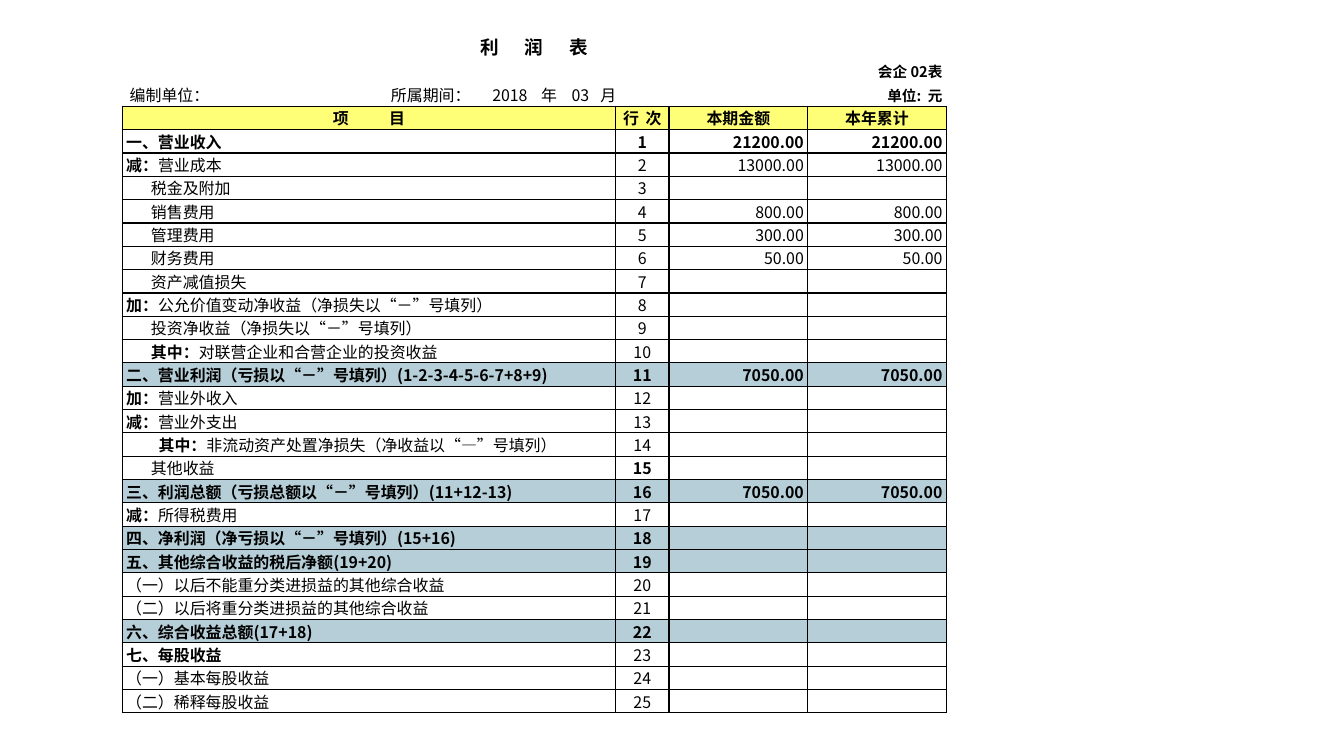
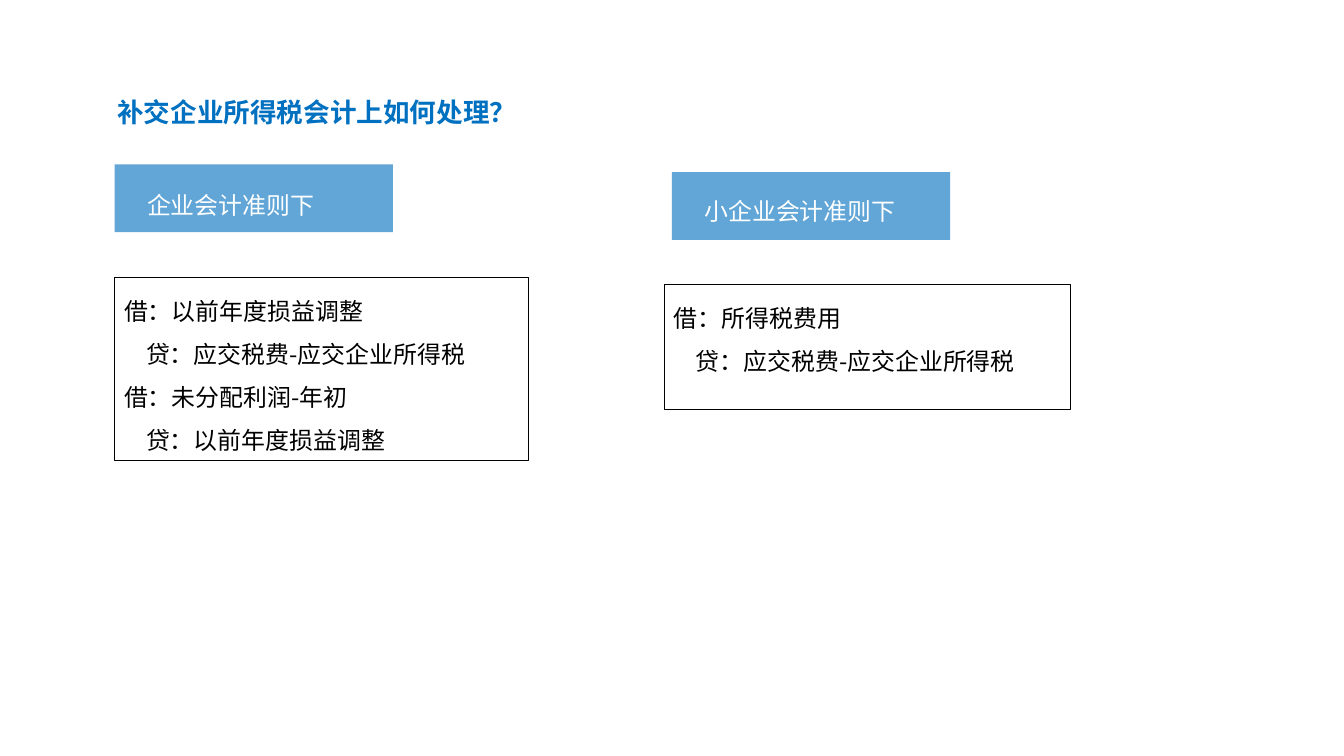
"""Build an income statement slide and a tax bookkeeping slide."""
from dataclasses import dataclass

from lxml import etree
from pptx import Presentation, util as u
from pptx.dml.color import RGBColor
from pptx.enum import shapes, text
from pptx.oxml import ns

PX = u.Inches(1) // 100
FONT = "Noto Sans CJK SC"
BLACK, WHITE, BLUE = "000000", "FFFFFF", "0070C0"
HEAD_FILL, TOTAL_FILL = "FFFF77", "B6CED7"
NO_GRID_STYLE = "{2D5ABB26-0587-4C30-8999-92F81FD0307C}"
LEFT, CENTER, RIGHT = text.PP_ALIGN.LEFT, text.PP_ALIGN.CENTER, text.PP_ALIGN.RIGHT
COLUMNS = (432, 84, 56, 145, 145)
TABLE_HEIGHT = 708
HEAD_ROWS = 4
PERIOD_TABS = (277, 383, 434, 466, 496)


@dataclass(frozen=True)
class Run:
    """A stretch of text with its own look."""
    text: str
    size: int = 12
    bold: bool = False
    color: str = BLACK
    spacing: int = 0


@dataclass(frozen=True)
class Item:
    """A numbered line of the income statement."""
    label: str
    lead: str = ""
    amount: str = ""
    indent: int = 0
    bold: bool = False
    number_bold: bool = False
    fill: str = ""


@dataclass(frozen=True)
class Entry:
    """A line of a journal entry."""
    text: str
    indent: int = 0


@dataclass(frozen=True)
class Standard:
    """A tag, its caption and its boxed journal entries."""
    tag: tuple[int, int]
    caption: tuple[int, int, int, int]
    name: str
    box: tuple[int, int, int, int]
    entries: tuple[Entry, ...]


def total(label: str, amount: str = "") -> Item:
    """Return a shaded bold line."""
    return Item(label, amount=amount, bold=True, number_bold=True, fill=TOTAL_FILL)


ITEMS = (
    Item("一、营业收入", amount="21200.00", bold=True, number_bold=True),
    Item("营业成本", "减：", "13000.00"),
    Item("税金及附加", indent=26),
    Item("销售费用", amount="800.00", indent=26),
    Item("管理费用", amount="300.00", indent=26),
    Item("财务费用", amount="50.00", indent=26),
    Item("资产减值损失", indent=26),
    Item("公允价值变动净收益（净损失以“－”号填列）", "加："),
    Item("投资净收益（净损失以“－”号填列）", indent=26),
    Item("对联营企业和合营企业的投资收益", "其中：", indent=26),
    total("二、营业利润（亏损以“－”号填列）(1-2-3-4-5-6-7+8+9)", "7050.00"),
    Item("营业外收入", "加："),
    Item("营业外支出", "减："),
    Item("非流动资产处置净损失（净收益以“—”号填列）", "其中：", indent=34),
    Item("其他收益", indent=26, number_bold=True),
    total("三、利润总额（亏损总额以“－”号填列）(11+12-13)", "7050.00"),
    Item("所得税费用", "减："),
    total("四、净利润（净亏损以“－”号填列）(15+16)"),
    total("五、其他综合收益的税后净额(19+20)"),
    Item("（一）以后不能重分类进损益的其他综合收益"),
    Item("（二）以后将重分类进损益的其他综合收益"),
    total("六、综合收益总额(17+18)"),
    Item("七、每股收益", bold=True),
    Item("（一）基本每股收益"),
    Item("（二）稀释每股收益"),
)
STANDARDS = (
    Standard((120, 172), (144, 180, 204, 50), "企业会计准则下", (120, 290, 433, 192), (
        Entry("借：以前年度损益调整"),
        Entry("贷：应交税费-应交企业所得税", 23),
        Entry("借：未分配利润-年初"),
        Entry("贷：以前年度损益调整", 23),
    )),
    Standard((703, 180), (727, 186, 222, 65), "小企业会计准则下", (695, 298, 425, 131), (
        Entry("借：所得税费用"),
        Entry("贷：应交税费-应交企业所得税", 23),
    )),
)


def px(*lengths: int) -> list[int]:
    """Turn px into EMU."""
    return [length * PX for length in lengths]


def rgb(color: str) -> RGBColor:
    """Turn a hex string into a colour."""
    return RGBColor.from_string(color)


def sub(parent, tag: str, **attributes):
    """Append a drawing element."""
    child = etree.SubElement(parent, ns.qn(tag))
    for key, value in attributes.items():
        child.set(key, str(value))
    return child


def write(p, *runs: Run, align=LEFT, indent: int = 0, leading: float | None = None) -> None:
    """Fill a paragraph with formatted runs."""
    p.alignment = align
    if leading:
        p.line_spacing = leading
    if indent:
        pPr = p._p.get_or_add_pPr()
        pPr.set("marL", str(indent * PX))
        pPr.set("indent", "0")
    for run in runs:
        r = p.add_run()
        r.text = run.text
        r.font.size, r.font.bold = u.Pt(run.size), run.bold
        r.font.color.rgb = rgb(run.color)
        r.font.name = FONT
        rPr = r._r.get_or_add_rPr()
        sub(rPr, "a:ea", typeface=FONT)
        if run.spacing:
            rPr.set("spc", str(run.spacing))


def border(cell, *sides: str) -> None:
    """Draw black lines on the given sides of a cell."""
    tcPr = cell._tc.get_or_add_tcPr()
    for side in sides:
        ln = sub(tcPr, f"a:ln{side}", w=u.Pt(1))
        sub(sub(ln, "a:solidFill"), "a:srgbClr", val=BLACK)


def put(cell, *runs: Run, align=LEFT, indent: int = 0) -> None:
    """Write into a table cell."""
    write(cell.text_frame.paragraphs[0], *runs, align=align, indent=indent)


def add_grid(s):
    """Add the bare statement table with its merged cells and borders."""
    count = HEAD_ROWS + len(ITEMS)
    frame = s.shapes.add_table(count, len(COLUMNS), *px(128, 34, sum(COLUMNS), TABLE_HEIGHT))
    table = frame.table
    table.first_row = table.horz_banding = False
    table._tbl.tblPr.find(ns.qn("a:tableStyleId")).text = NO_GRID_STYLE
    for column, width in zip(table.columns, px(*COLUMNS)):
        column.width = width
    for i, row in enumerate(table.rows):
        row.height = TABLE_HEIGHT * PX // count
        fill = HEAD_FILL if i == HEAD_ROWS - 1 else ITEMS[i - HEAD_ROWS].fill if i >= HEAD_ROWS else ""
        for cell in row.cells:
            cell.margin_left = cell.margin_right = 4 * PX
            cell.margin_top = cell.margin_bottom = 0
            cell.vertical_anchor = text.MSO_ANCHOR.MIDDLE
            if i >= HEAD_ROWS - 1:
                border(cell, *"LRTB")
            elif i == HEAD_ROWS - 2:
                border(cell, "B")
            if fill:
                cell.fill.solid()
                cell.fill.fore_color.rgb = rgb(fill)
            else:
                cell.fill.background()
            sub(cell.text_frame.paragraphs[0]._p, "a:endParaRPr", sz=1100)
    spans = [(0, 0, 4), (1, 1, 2), (2, 0, 3)]
    spans += [(i, 0, 1) for i in range(HEAD_ROWS - 1, count)]
    for i, first, last in spans:
        table.cell(i, first).merge(table.cell(i, last))
    return table


def statement_slide(s) -> None:
    """Draw the income statement."""
    table = add_grid(s)
    put(table.cell(0, 0), Run("利 润 ", 14, True, spacing=800), Run("表", 14, True), align=CENTER)
    put(table.cell(1, 4), Run("会企 02表", 11, True), align=RIGHT)
    put(table.cell(2, 4), Run("单位", 11, True), Run(": ", 11, True, spacing=120),
        Run("元", 11, True), align=RIGHT)
    period = table.cell(2, 0)
    period.vertical_anchor = text.MSO_ANCHOR.TOP
    tabs = sub(period.text_frame.paragraphs[0]._p.get_or_add_pPr(), "a:tabLst")
    for stop in px(*PERIOD_TABS):
        sub(tabs, "a:tab", pos=stop, algn="l")
    put(period, Run(" 编制单位：\t所属期间：\t2018\t年\t03\t月"))
    heads = ((0, "项 ", "目", 1380), (2, "行 ", "次", 110), (3, "本期金额", "", 0), (4, "本年累计", "", 0))
    for column, start, end, spacing in heads:
        runs = [Run(start, bold=True, spacing=spacing)] + ([Run(end, bold=True)] if end else [])
        put(table.cell(HEAD_ROWS - 1, column), *runs, align=CENTER)
    for number, item in enumerate(ITEMS, 1):
        i = HEAD_ROWS + number - 1
        runs = [Run(item.lead, bold=True)] if item.lead else []
        put(table.cell(i, 0), *runs, Run(item.label, bold=item.bold), indent=item.indent)
        put(table.cell(i, 2), Run(str(number), bold=item.number_bold), align=CENTER)
        if item.amount:
            for column in (3, 4):
                put(table.cell(i, column), Run(item.amount, bold=item.bold), align=RIGHT)


def add_text(s, at: tuple[int, int, int, int], run: Run, wrap: bool = True) -> None:
    """Add a text box with one line."""
    tf = s.shapes.add_textbox(*px(*at)).text_frame
    tf.word_wrap = wrap
    write(tf.paragraphs[0], run, leading=1.5)


def add_rect(s, at: tuple[int, int, int, int]):
    """Add a rectangle without shadow."""
    sp = s.shapes.add_shape(shapes.MSO_SHAPE.RECTANGLE, *px(*at))
    sp.shadow.inherit = False
    return sp


def add_standard(s, standard: Standard) -> None:
    """Draw one accounting standard with its entries."""
    tag = add_rect(s, (*standard.tag, 291, 71))
    tag.fill.solid()
    tag.fill.fore_color.rgb = rgb(BLUE)
    sub(tag.fill._xPr.find(ns.qn("a:solidFill"))[0], "a:alpha", val=62000)
    tag.line.fill.background()
    add_text(s, standard.caption, Run(standard.name, 18, color=WHITE), wrap=False)
    box = add_rect(s, standard.box)
    box.fill.background()
    box.line.color.rgb = rgb(BLACK)
    box.line.width = u.Pt(0.75)
    tf = box.text_frame
    tf.word_wrap = True
    tf.vertical_anchor = text.MSO_ANCHOR.TOP
    for i, entry in enumerate(standard.entries):
        p = tf.add_paragraph() if i else tf.paragraphs[0]
        write(p, Run(entry.text, 18), indent=entry.indent, leading=1.5)


def bookkeeping_slide(s) -> None:
    """Draw the two ways of booking back tax."""
    add_text(s, (113, 79, 1126, 197), Run("补交企业所得税会计上如何处理？", 20, True, BLUE))
    for standard in STANDARDS:
        add_standard(s, standard)


def main() -> None:
    """Build and save the deck."""
    prs = Presentation()
    prs.slide_width, prs.slide_height = px(1406, 791)
    for draw in (statement_slide, bookkeeping_slide):
        draw(prs.slides.add_slide(prs.slide_layouts[6]))
    prs.save("out.pptx")


if __name__ == "__main__":
    main()
